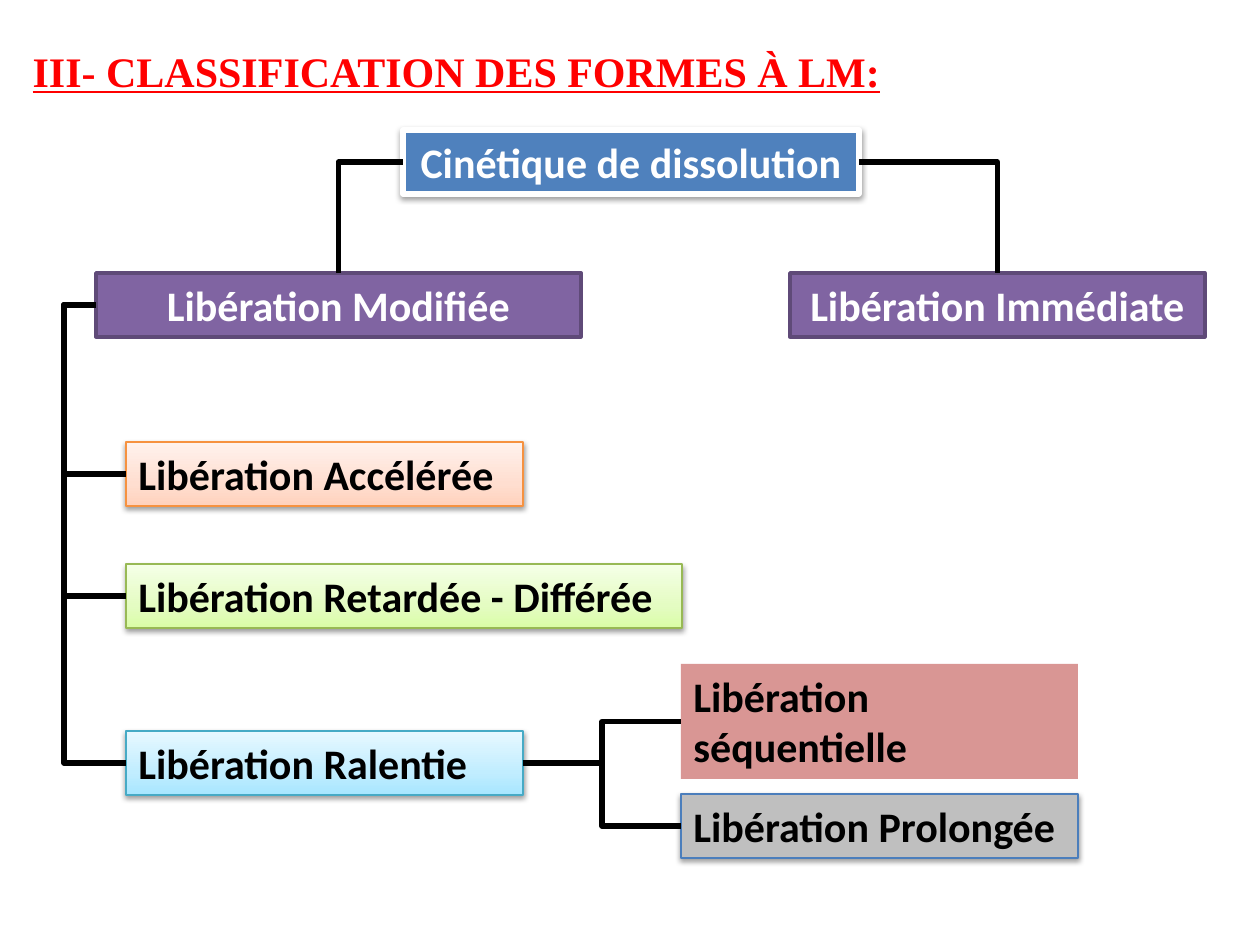
from copy import deepcopy

from lxml import etree
from pptx import Presentation
from pptx.dml.color import RGBColor
from pptx.enum.shapes import MSO_CONNECTOR, MSO_SHAPE
from pptx.enum.text import MSO_ANCHOR, MSO_AUTO_SIZE, PP_ALIGN
from pptx.oxml import parse_xml
from pptx.oxml.ns import nsdecls, qn
from pptx.util import Emu, Pt

ELBOW = MSO_CONNECTOR.ELBOW
RECTANGLE = MSO_SHAPE.RECTANGLE
LEFT, CENTER = PP_ALIGN.LEFT, PP_ALIGN.CENTER
TOP_SIDE, LEFT_SIDE, RIGHT_SIDE = 0, 1, 3

PX_PER_INCH = 126
SLIDE_WIDTH, SLIDE_HEIGHT = 1260, 945
ROW_HEIGHT = 64
RAIL_X = 64  # vertical line that links the modified-release forms

SHADOW_XML = (
    f'<a:outerShdw {nsdecls("a")} blurRad="40000" dist="20000" dir="5400000" '
    'rotWithShape="0"><a:srgbClr val="000000"><a:alpha val="38000"/>'
    '</a:srgbClr></a:outerShdw>'
)


def px(length):
    return Emu(round(length * 914400 / PX_PER_INCH))


def rgb(color):
    return RGBColor.from_string(color)


def write_text(frame, text, *, color="000000", font="Calibri", size=24,
               align=LEFT, underline=False):
    frame.word_wrap = True
    frame.auto_size = MSO_AUTO_SIZE.SHAPE_TO_FIT_TEXT
    frame.vertical_anchor = MSO_ANCHOR.TOP
    paragraph = frame.paragraphs[0]
    paragraph.alignment = align
    run = paragraph.add_run()
    run.text = text
    run.font.name = font
    run.font.size = Pt(size)
    run.font.bold = True
    run.font.underline = underline
    run.font.color.rgb = rgb(color)


class Diagram:
    """Holds the slide and the style of its boxes and connectors."""

    line_color = "000000"
    line_width = 3

    def __init__(self, presentation):
        self.slide = presentation.slides.add_slide(presentation.slide_layouts[5])

    def title(self, text, left, top, width, height):
        title = self.slide.shapes.title
        title.left, title.top = px(left), px(top)
        title.width, title.height = px(width), px(height)
        write_text(title.text_frame, text, color="FF0000",
                   font="Times New Roman", underline=True)

    def box(self, text, left, top, width, height=ROW_HEIGHT, *, fill,
            line=None, line_width=0.75, shadow=True, **text_format):
        shape = self.slide.shapes.add_shape(
            RECTANGLE, px(left), px(top), px(width), px(height))
        self.paint(shape, fill)
        if line:
            shape.line.color.rgb = rgb(line)
            shape.line.width = Pt(line_width)
        else:
            shape.line.fill.background()
        shape.shadow.inherit = False
        if shadow:
            effects = shape.element.spPr.find(qn("a:effectLst"))
            effects.append(parse_xml(SHADOW_XML))
        write_text(shape.text_frame, text, **text_format)
        return shape

    def paint(self, shape, fill):
        """Fill with one colour, or with three as a bottom-to-top gradient."""
        if isinstance(fill, str):
            shape.fill.solid()
            shape.fill.fore_color.rgb = rgb(fill)
            return
        shape.fill.gradient()
        shape.fill.gradient_angle = 90
        stop_list = shape.element.spPr.find(".//" + qn("a:gsLst"))
        stop_list.append(deepcopy(stop_list[0]))
        for stop, position, color in zip(shape.fill.gradient_stops,
                                         (0, 0.35, 1), fill):
            stop.position = position
            stop.color.rgb = rgb(color)

    def elbow(self, start, start_side, end, end_side, *, bends=2, bend_x=None):
        connector = self.slide.shapes.add_connector(ELBOW, 0, 0, 0, 0)
        connector.begin_connect(start, start_side)
        connector.end_connect(end, end_side)
        connector.line.color.rgb = rgb(self.line_color)
        connector.line.width = Pt(self.line_width)
        properties = connector.element.spPr
        etree.SubElement(properties, qn("a:effectLst"))
        geometry = properties.find(qn("a:prstGeom"))
        geometry.set("prst", f"bentConnector{bends + 1}")
        if bend_x is not None:
            span = connector.end_x - connector.begin_x
            ratio = (px(bend_x) - connector.begin_x) / span
            guides = geometry.find(qn("a:avLst"))
            etree.SubElement(guides, qn("a:gd"), name="adj1",
                             fmla=f"val {round(ratio * 100000)}")


def main():
    presentation = Presentation()
    presentation.slide_width = px(SLIDE_WIDTH)
    presentation.slide_height = px(SLIDE_HEIGHT)
    diagram = Diagram(presentation)
    diagram.title("III- CLASSIFICATION DES FORMES À LM:", 20, 39, 1211, 64)

    # Root and its two branches
    heading = {"color": "FFFFFF", "align": CENTER}
    branch = {"fill": "8064A2", "line": "5F4A78", "line_width": 2,
              "shadow": False, **heading}
    root = diagram.box("Cinétique de dissolution", 403, 130, 456,
                       fill="4F81BD", line="FFFFFF", line_width=3, **heading)
    modified = diagram.box("Libération Modifiée", 96, 273, 485, **branch)
    immediate = diagram.box("Libération Immédiate", 790, 273, 415, **branch)
    diagram.elbow(root, LEFT_SIDE, modified, TOP_SIDE, bends=1)
    diagram.elbow(root, RIGHT_SIDE, immediate, TOP_SIDE, bends=1)

    # Forms of modified release, hung on one rail
    forms = [
        ("Libération Accélérée", 442, 397, ("FFD2BD", "FFDED0", "FFF2ED"), "F69240"),
        ("Libération Retardée - Différée", 564, 556,
         ("DAFDA7", "E4FCC2", "F5FFE7"), "98B955"),
        ("Libération Ralentie", 731, 397, ("A7E6FF", "C1EDFF", "E7F8FF"), "46AAC5"),
    ]
    for text, top, width, fill, line in forms:
        form = diagram.box(text, 126, top, width, fill=fill, line=line)
        diagram.elbow(modified, LEFT_SIDE, form, LEFT_SIDE, bend_x=RAIL_X)
    slowed = form  # the last form splits further

    # Kinds of slowed release
    prolonged = diagram.box("Libération Prolongée", 681, 794, 397,
                            fill="BFBFBF", line="4B7EBC")
    sequential = diagram.box("Libération séquentielle", 681, 664, 397, 115,
                             fill="D99694", shadow=False)
    for kind in (sequential, prolonged):
        diagram.elbow(slowed, RIGHT_SIDE, kind, LEFT_SIDE)

    presentation.save("out.pptx")


if __name__ == "__main__":
    main()
